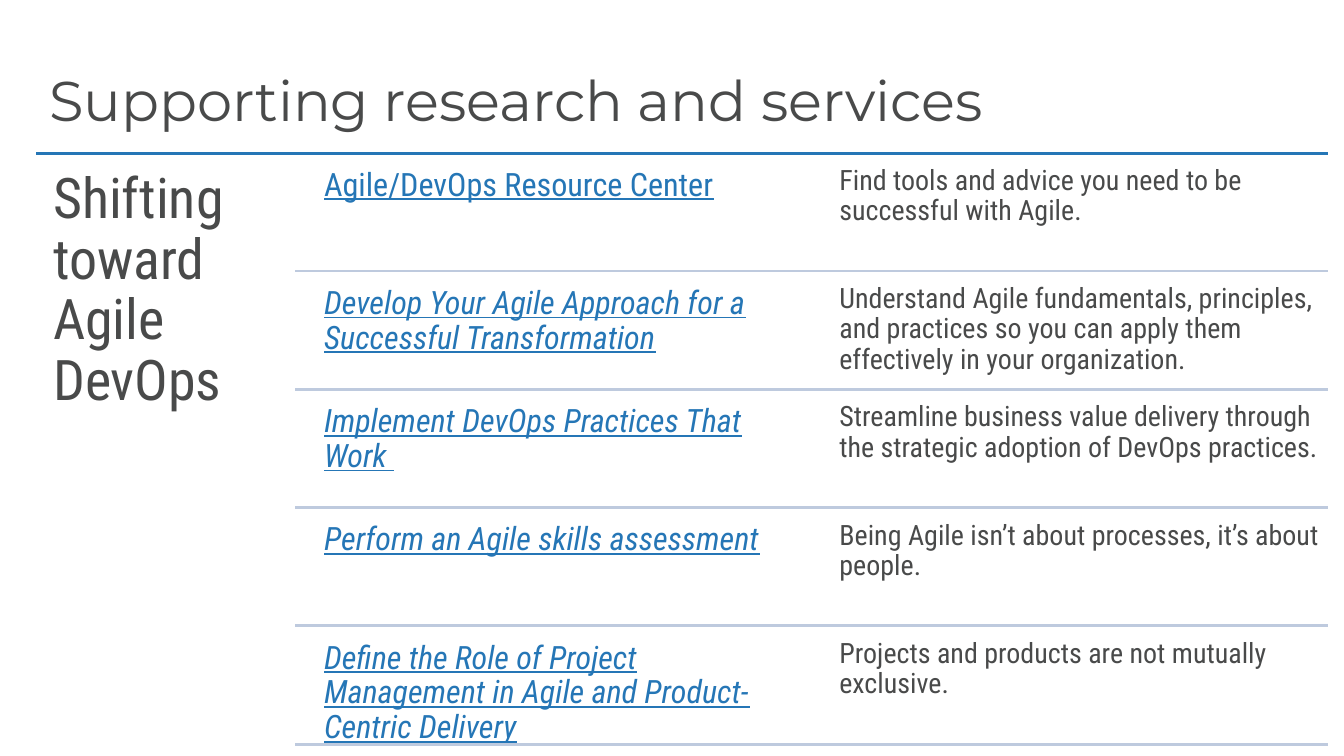
from lxml.etree import SubElement
from pptx import Presentation
from pptx.dml.color import RGBColor
from pptx.enum.shapes import MSO_CONNECTOR as Connector
from pptx.enum.text import MSO_ANCHOR as Anchor, MSO_AUTO_SIZE as AutoSize, PP_ALIGN as Align
from pptx.oxml.ns import qn
from pptx.util import Cm, Pt

GREY = RGBColor(0x49, 0x4A, 0x4A)
BLUE = RGBColor(0x25, 0x76, 0xB6)
PALE_BLUE = RGBColor(0xBE, 0xCA, 0xDE)
BODY_FONT = "Roboto Condensed"
RIGHT_EDGE = 33.48

deck = Presentation()
deck.slide_width, deck.slide_height = Cm(33.88), Cm(19.05)
page = deck.slides.add_slide(deck.slide_layouts[5])


def add_rule(left, top, color):
    rule = page.shapes.add_connector(
        Connector.STRAIGHT, Cm(left), Cm(top), Cm(RIGHT_EDGE), Cm(top))
    rule.line.color.rgb = color
    rule.line.width = Pt(2)
    SubElement(rule._element.spPr, qn("a:effectLst"))


def add_text(text, left, top, width, height, inset, size, color=GREY):
    box = page.shapes.add_textbox(Cm(left), Cm(top), Cm(width), Cm(height))
    frame = box.text_frame
    frame.word_wrap = True
    frame.margin_left = frame.margin_right = Cm(inset)
    frame.margin_top = frame.margin_bottom = Cm(inset)
    frame.text = text
    para = frame.paragraphs[0]
    para.line_spacing = 0.9
    font = para.runs[0].font
    font.name, font.size, font.color.rgb = BODY_FONT, Pt(size), color
    return font


# Title
title = page.shapes.title
title.left, title.top, title.width, title.height = Cm(0.99), Cm(1.52), Cm(32), Cm(3.15)
title_frame = title.text_frame
title_frame.text = "Supporting research and services"
title_frame.vertical_anchor = Anchor.TOP
title_frame.auto_size = AutoSize.NONE
title_para = title_frame.paragraphs[0]
title_para.alignment = Align.LEFT
title_font = title_para.runs[0].font
title_font.name, title_font.size, title_font.color.rgb = "Montserrat", Pt(40), GREY

# Topic column under the main rule
add_rule(0.91, 3.86, BLUE)
add_text("Shifting toward Agile DevOps", 0.91, 3.86, 6.5, 15.06, 0.43, 40)

# Resource rows: name, description, dividing rule
resources = [
    ("Agile/DevOps Resource Center",
     "Find tools and advice you need to be successful with Agile."),
    ("Develop Your Agile Approach for a Successful Transformation",
     "Understand Agile fundamentals, principles, and practices so you can "
     "apply them effectively in your organization."),
    ("Implement DevOps Practices That Work ",
     "Streamline business value delivery through the strategic adoption of "
     "DevOps practices."),
    ("Perform an Agile skills assessment",
     "Being Agile isn’t about processes, it’s about people."),
    ("Define the Role of Project Management in Agile and Product-Centric Delivery",
     "Projects and products are not mutually exclusive."),
]
ROW_TOP, ROW_PITCH, ROW_HEIGHT = 3.99, 2.98, 2.84
for index, (name, description) in enumerate(resources):
    top = ROW_TOP + index * ROW_PITCH
    name_font = add_text(name, 7.92, top, 12.55, ROW_HEIGHT, 0.25, 23, BLUE)
    name_font.underline = True
    name_font.italic = index > 0
    add_text(description, 20.96, top, 12.55, ROW_HEIGHT, 0.2, 20)
    add_rule(7.44, top + ROW_HEIGHT, PALE_BLUE)

deck.save("out.pptx")
